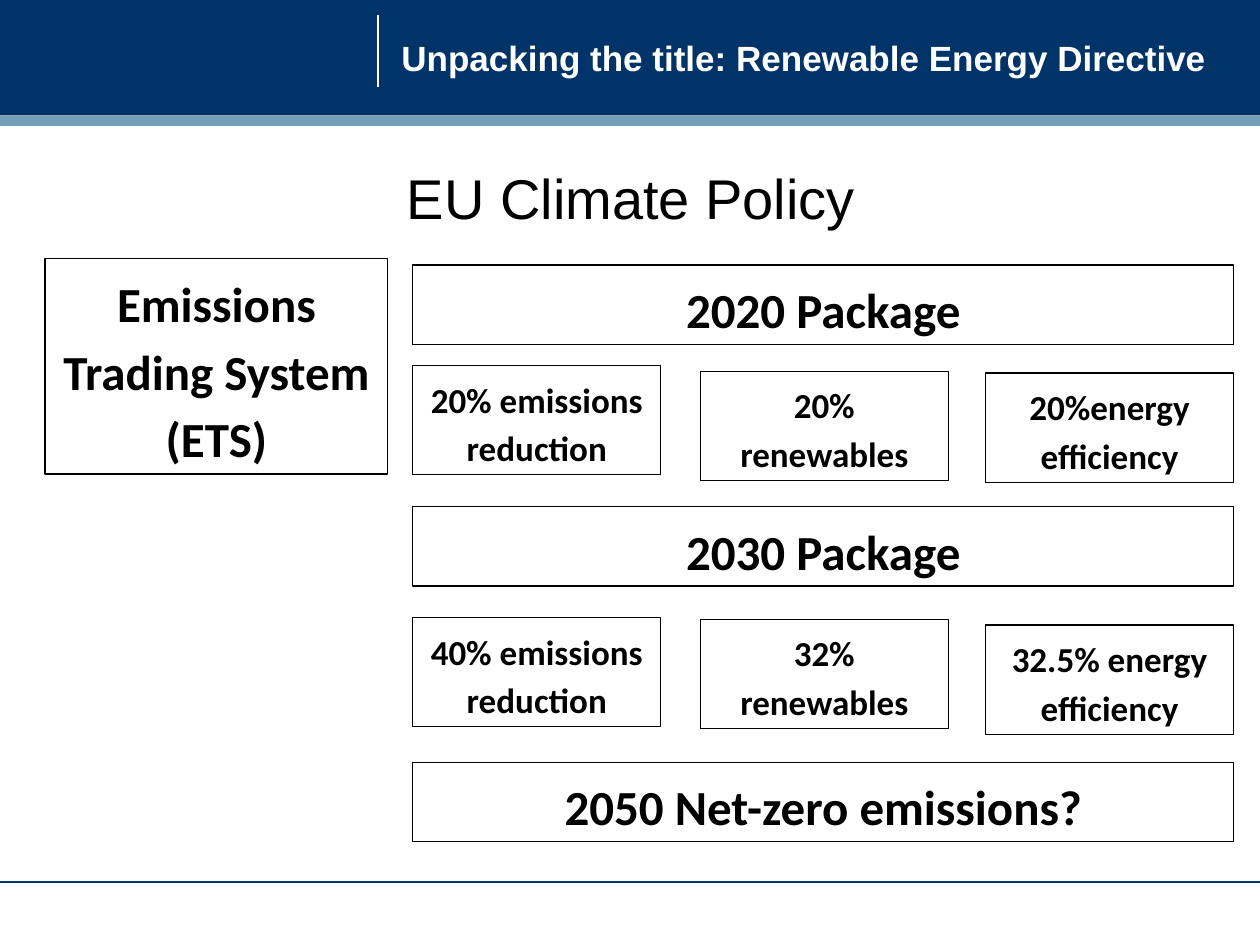
from lxml.etree import SubElement
from pptx import Presentation
from pptx.dml.color import RGBColor
from pptx.enum.shapes import MSO_CONNECTOR, MSO_SHAPE
from pptx.enum.text import MSO_ANCHOR, MSO_AUTO_SIZE, PP_ALIGN
from pptx.oxml.ns import qn
from pptx.util import Pt

NAVY, STEEL, WHITE, BLACK = "003368", "759FB8", "FFFFFF", "000000"
SLIDE_W, SLIDE_H = 720, 540

TITLE = "Unpacking the title: Renewable Energy Directive"
HEADING = "EU Climate Policy"
ETS = ("Emissions Trading System (ETS)", 25.7, 147.8, 195.9, 123.1)

# (text, top)
PACKAGES = [
    ("2020 Package", 151.5),
    ("2030 Package", 289.5),
    ("2050 Net-zero emissions?", 435.6),
]
TARGETS = [
    [("20% emissions reduction", 208.8), ("20% renewables", 212.1), ("20%energy efficiency", 213.2)],
    [("40% emissions reduction", 352.8), ("32% renewables", 353.9), ("32.5% energy efficiency", 357.2)],
]
PACKAGE_LEFT, PACKAGE_W, PACKAGE_H = 235.9, 469, 45.4
TARGET_LEFTS, TARGET_W, TARGET_H = (235.9, 400.2, 563.2), 141.7, 62.4

BOX_FONT = {"name": "Calibri", "bold": True}
TITLE_FONT = {"name": "Arial", "size": Pt(20), "bold": True}
HEADING_FONT = {"name": "Arial", "size": Pt(32), "bold": False}
BOX_PARAGRAPH = {"alignment": PP_ALIGN.CENTER, "line_spacing": 1.15, "space_after": Pt(10)}


def rgb(color):
    return RGBColor.from_string(color)


def write(s, text, font, color, paragraph, frame):
    tf = s.text_frame
    p = tf.paragraphs[0]
    r = p.add_run()
    r.text = text
    r.font.color.rgb = rgb(color)
    for target, values in ((tf, frame), (p, paragraph), (r.font, font)):
        for name, value in values.items():
            setattr(target, name, value)


def add_rect(slide, left, top, width, height, fill, line=None):
    s = slide.shapes.add_shape(MSO_SHAPE.RECTANGLE, Pt(left), Pt(top), Pt(width), Pt(height))
    s.shadow.inherit = False
    s.fill.solid()
    s.fill.fore_color.rgb = rgb(fill)
    if line:
        s.line.color.rgb = rgb(line)
        s.line.width = Pt(0.75)
    else:
        s.line.fill.background()
    return s


def add_box(slide, text, left, top, width, height, size):
    s = add_rect(slide, left, top, width, height, WHITE, BLACK)
    write(s, text, {**BOX_FONT, "size": Pt(size)}, BLACK, BOX_PARAGRAPH,
          {"word_wrap": True, "vertical_anchor": MSO_ANCHOR.MIDDLE,
           "auto_size": MSO_AUTO_SIZE.SHAPE_TO_FIT_TEXT})


def add_line(slide, x1, y1, x2, y2, color):
    s = slide.shapes.add_connector(MSO_CONNECTOR.STRAIGHT, Pt(x1), Pt(y1), Pt(x2), Pt(y2))
    s.line.color.rgb = rgb(color)
    s.line.width = Pt(0.75)
    SubElement(s._element.spPr, qn("a:effectLst"))


def add_label(slide, text, left, top, width, height, font, color, paragraph, frame):
    s = slide.shapes.add_textbox(Pt(left), Pt(top), Pt(width), Pt(height))
    write(s, text, font, color, paragraph, {"word_wrap": True, **frame})


def main():
    prs = Presentation()
    prs.slide_width, prs.slide_height = Pt(SLIDE_W), Pt(SLIDE_H)
    slide = prs.slides.add_slide(prs.slide_layouts[6])

    add_rect(slide, 0, 0, SLIDE_W, 66, NAVY)
    add_rect(slide, 0, 66, SLIDE_W, 6, STEEL)
    add_line(slide, 216, 8.6, 216, 49.5, WHITE)
    add_line(slide, 0, 504, SLIDE_W, 504, NAVY)
    add_label(slide, TITLE, 222.3, 6, 481.7, 54, TITLE_FONT, WHITE, {},
              {"vertical_anchor": MSO_ANCHOR.MIDDLE})
    add_label(slide, HEADING, 54, 86.4, 597.6, 53.3, HEADING_FONT, BLACK,
              {"alignment": PP_ALIGN.CENTER},
              {"margin_left": Pt(23), "margin_top": Pt(7.2), "margin_bottom": Pt(7.2)})

    add_box(slide, *ETS, 28)
    for text, top in PACKAGES:
        add_box(slide, text, PACKAGE_LEFT, top, PACKAGE_W, PACKAGE_H, 28)
    for row in TARGETS:
        for left, (text, top) in zip(TARGET_LEFTS, row):
            add_box(slide, text, left, top, TARGET_W, TARGET_H, 20)

    prs.save("out.pptx")


if __name__ == "__main__":
    main()
